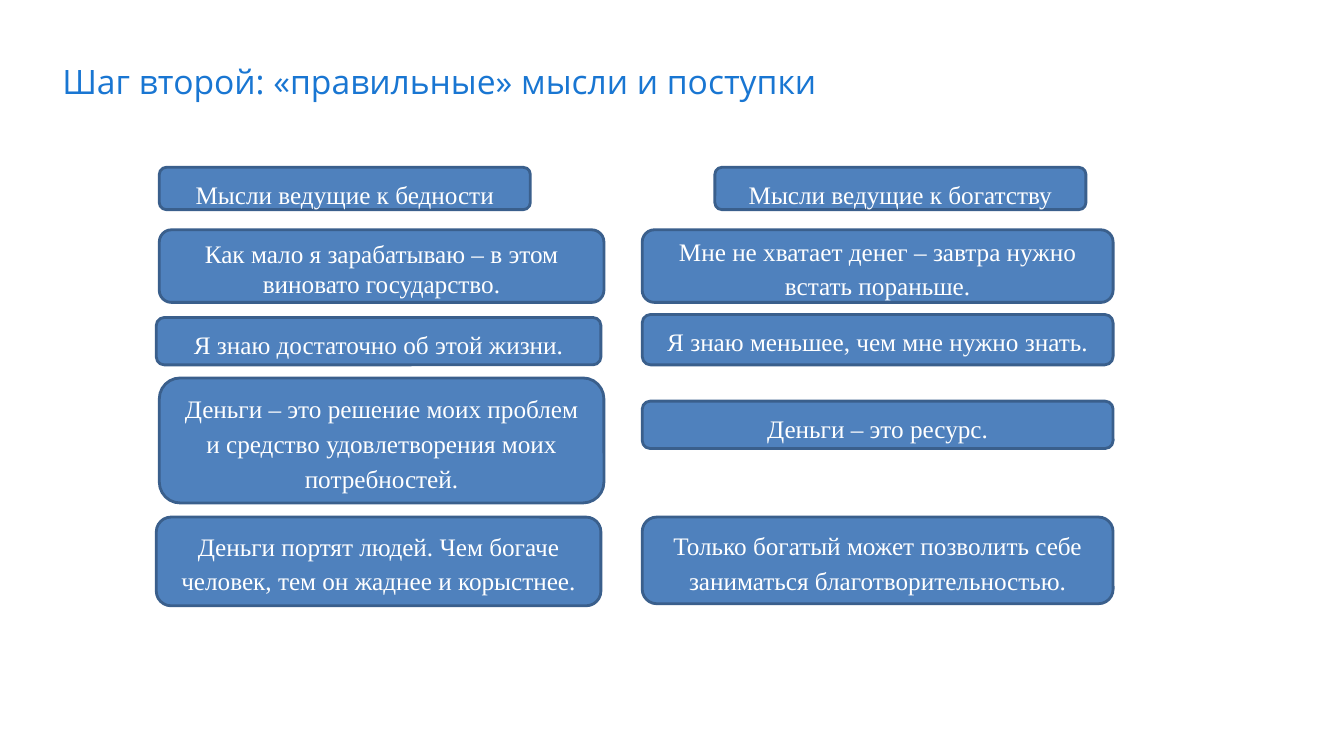
import pptx
import pptx.dml.color
import pptx.enum.shapes
import pptx.enum.text
import pptx.util
from dataclasses import dataclass

Inches = pptx.util.Inches
Pt = pptx.util.Pt
Anchor = pptx.enum.text.MSO_ANCHOR
AutoSize = pptx.enum.text.MSO_AUTO_SIZE


@dataclass(frozen=True)
class Theme:
    title_font: str = "Open Sans"
    body_font: str = "Times New Roman"
    title_size: int = 24
    body_size: int = 18
    title: str = "1976D2"
    fill: str = "4F81BD"
    line: str = "3A5F8C"
    text: str = "FFFFFF"


@dataclass(frozen=True)
class Card:
    text: str
    top: float
    height: float
    shift: float = 0
    anchor: Anchor = Anchor.TOP
    inset: float = 0.05
    spacing: float = 1.15
    after: int = 10
    grow: bool = False


THEME = Theme()
TITLE = "Шаг второй: «правильные» мысли и поступки"
HEADING_TOP, HEADING_WIDTH, HEADING_HEIGHT = 1.66, 3.68, 0.42

POVERTY = [
    Card("Как мало я зарабатываю – в этом виновато государство.", 2.28, 0.72,
         spacing=1, after=6),
    Card("Я знаю достаточно об этой жизни.", 3.15, 0.47, shift=-0.03, grow=True),
    Card("Деньги – это решение моих проблем и средство удовлетворения моих потребностей.",
         3.75, 1.24, grow=True),
    Card("Деньги портят людей. Чем богаче человек, тем он жаднее и корыстнее.",
         5.13, 0.88, shift=-0.03, grow=True),
]
WEALTH = [
    Card("Мне не хватает денег – завтра нужно встать пораньше.", 2.28, 0.72,
         anchor=Anchor.MIDDLE),
    Card("Я знаю меньшее, чем мне нужно знать.", 3.12, 0.5, grow=True),
    Card("Деньги – это ресурс.", 3.98, 0.47, grow=True),
    Card("Только богатый может позволить себе заниматься благотворительностью.",
         5.13, 0.86, grow=True),
]


def rgb(value):
    return pptx.dml.color.RGBColor.from_string(value)


def add_run(p, text, font, size, color):
    r = p.add_run()
    r.text = text
    r.font.name = font
    r.font.size = Pt(size)
    r.font.color.rgb = rgb(color)


def add_title(s, left, top, width, height):
    sp = s.shapes.add_textbox(Inches(left), Inches(top), Inches(width), Inches(height))
    tf = sp.text_frame
    tf.word_wrap = True
    tf.vertical_anchor = Anchor.BOTTOM
    p = tf.paragraphs[0]
    p.line_spacing = 0.9
    add_run(p, TITLE, THEME.title_font, THEME.title_size, THEME.title)


def add_card(s, card, left, width):
    sp = s.shapes.add_shape(
        pptx.enum.shapes.MSO_SHAPE.ROUNDED_RECTANGLE,
        Inches(left + card.shift), Inches(card.top), Inches(width), Inches(card.height))
    sp.shadow.inherit = False
    sp.fill.solid()
    sp.fill.fore_color.rgb = rgb(THEME.fill)
    sp.line.color.rgb = rgb(THEME.line)
    sp.line.width = Pt(2)
    tf = sp.text_frame
    tf.word_wrap = True
    tf.auto_size = AutoSize.SHAPE_TO_FIT_TEXT if card.grow else AutoSize.NONE
    tf.vertical_anchor = card.anchor
    tf.margin_top = Inches(card.inset)
    p = tf.paragraphs[0]
    p.alignment = pptx.enum.text.PP_ALIGN.CENTER
    p.line_spacing = card.spacing
    p.space_after = Pt(card.after)
    add_run(p, card.text, THEME.body_font, THEME.body_size, THEME.text)


def add_column(s, heading, cards, left, width, heading_shift=0):
    """Place a heading and its cards in a column."""
    add_card(s, Card(heading, HEADING_TOP, HEADING_HEIGHT, heading_shift, inset=0.05),
             left, HEADING_WIDTH)
    for card in cards:
        add_card(s, card, left, width)


def main():
    prs = pptx.Presentation()
    prs.slide_width = Inches(13.33)
    prs.slide_height = Inches(7.5)
    s = prs.slides.add_slide(prs.slide_layouts[6])
    add_title(s, 0.52, 0.64, 10.83, 0.42)
    add_column(s, "Мысли ведущие к бедности", POVERTY, 1.58, 4.41)
    add_column(s, "Мысли ведущие к богатству", WEALTH, 6.37, 4.67, heading_shift=0.72)
    prs.save("out.pptx")


if __name__ == "__main__":
    main()
